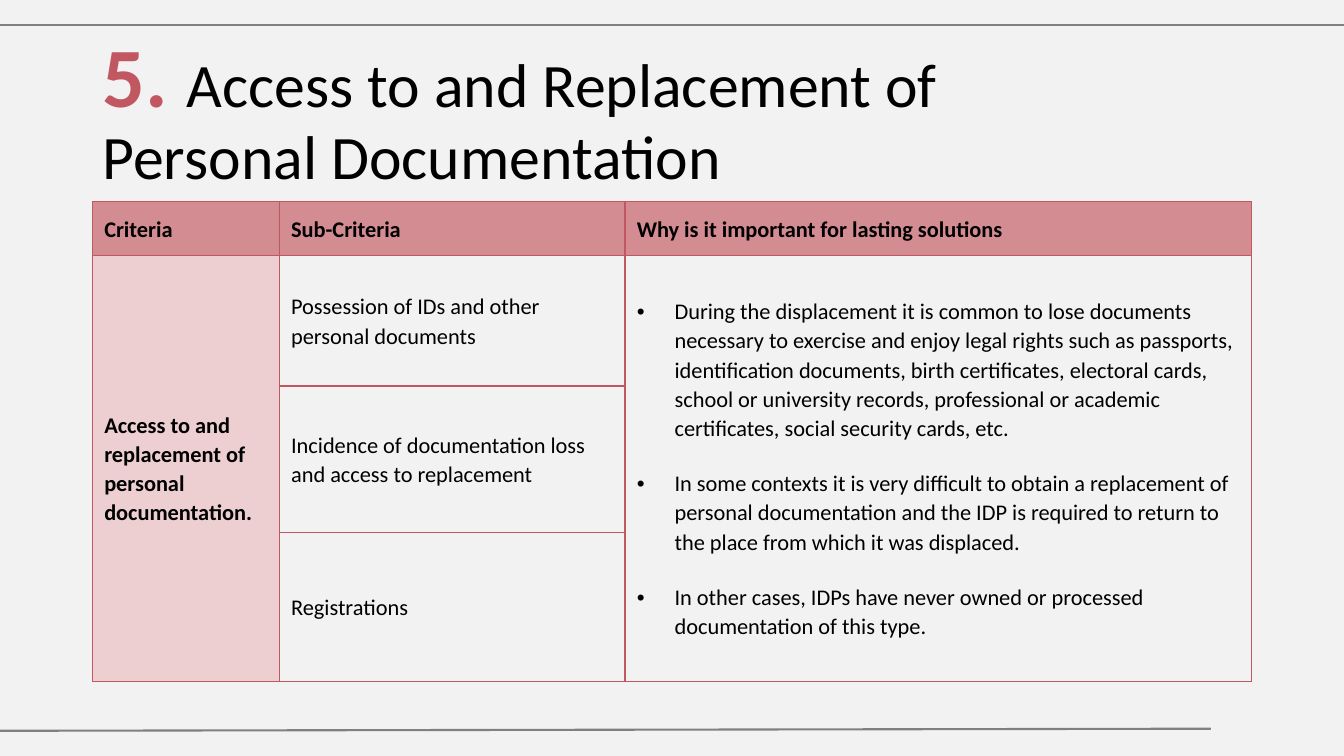
from lxml.etree import SubElement
from pptx import Presentation
from pptx.dml.color import RGBColor
from pptx.enum.shapes import MSO_CONNECTOR as Connector
from pptx.enum.text import MSO_ANCHOR as Anchor, MSO_AUTO_SIZE as AutoSize, PP_ALIGN as Align
from pptx.oxml.ns import qn
from pptx.util import Pt

FONT = "Calibri"
COLORS = {"page": "F2F2F2", "rule": "808080", "accent": "C05761",
          "header": "D48C93", "criteria": "EDCFD2", "text": "000000"}

TITLE = [("5. ", 60.3, "accent", True),
         ("Access to and Replacement of Personal Documentation", 44.1, "text", False)]
HEADERS = ["Criteria", "Sub-Criteria", "Why is it important for lasting solutions"]
CRITERIA = "Access to and replacement of personal documentation."
SUB_CRITERIA = ["Possession of IDs and other personal documents",
                "Incidence of documentation loss and access to replacement",
                "Registrations"]
REASONS = [
    "During the displacement it is common to lose documents necessary to exercise "
    "and enjoy legal rights such as passports, identification documents, birth "
    "certificates, electoral cards, school or university records, professional or "
    "academic certificates, social security cards, etc.",
    "In some contexts it is very difficult to obtain a replacement of personal "
    "documentation and the IDP is required to return to the place from which it "
    "was displaced.",
    "In other cases, IDPs have never owned or processed documentation of this type.",
]

WIDTH, HEIGHT = 960, 540
RULES = [(0, 18, WIDTH, 18), (0, 522, 865, 520.5)]
TITLE_BOX = (66, 29, 756, 104.5)
TABLE_LEFT, TABLE_TOP = 66, 144
COL_WIDTHS = [133.5, 246.9, 447.6]
ROW_HEIGHTS = [38.6, 93.2, 104.4, 106.4]


def color(name):
    return RGBColor.from_string(COLORS[name])


def add_run(p, text, size, color_name, bold):
    r = p.add_run()
    r.text = text
    r.font.name, r.font.size, r.font.bold = FONT, Pt(size), bold
    r.font.color.rgb = color(color_name)


def add_rule(s, x1, y1, x2, y2):
    line = s.shapes.add_connector(Connector.STRAIGHT, Pt(x1), Pt(y1), Pt(x2), Pt(y2))
    line.line.color.rgb = color("rule")
    line.line.width = Pt(1.5)
    SubElement(line._element.spPr, qn("a:effectLst"))


def add_bullet(p):
    pPr = p._p.get_or_add_pPr()
    pPr.set("marL", str(Pt(27)))
    pPr.set("indent", str(Pt(-27)))
    SubElement(pPr, qn("a:buFont"), typeface="Arial")
    SubElement(pPr, qn("a:buChar"), char="•")


def format_cell(cell, fill=None):
    tcPr = cell._tc.get_or_add_tcPr()
    for side in ("lnL", "lnR", "lnT", "lnB"):
        ln = SubElement(tcPr, qn(f"a:{side}"), w=str(Pt(1)))
        SubElement(SubElement(ln, qn("a:solidFill")), qn("a:srgbClr"), val=COLORS["accent"])
    if fill:
        cell.fill.solid()
        cell.fill.fore_color.rgb = color(fill)
    else:
        cell.fill.background()
    cell.vertical_anchor = Anchor.MIDDLE
    cell.margin_left = cell.margin_right = Pt(8.5)
    cell.margin_top = cell.margin_bottom = Pt(5.5)


def write_cell(cell, paragraphs, bold=False, bullets=False):
    tf = cell.text_frame
    for i, text in enumerate(paragraphs):
        p = tf.add_paragraph() if i else tf.paragraphs[0]
        if bullets:
            add_bullet(p)
        p.line_spacing = 1.07
        p.space_after = Pt(0 if bullets else 8)
        if i:
            p.space_before = Pt(18.3)
        add_run(p, text, 16, "text", bold)


def add_title(s):
    title = s.shapes.title
    title.left, title.top, title.width, title.height = map(Pt, TITLE_BOX)
    tf = title.text_frame
    tf.word_wrap, tf.auto_size = True, AutoSize.NONE
    tf.vertical_anchor = Anchor.MIDDLE
    p = tf.paragraphs[0]
    p.alignment, p.line_spacing = Align.LEFT, 0.9
    for run in TITLE:
        add_run(p, *run)


def add_criteria_table(s):
    table = s.shapes.add_table(len(ROW_HEIGHTS), len(COL_WIDTHS), Pt(TABLE_LEFT), Pt(TABLE_TOP),
                               Pt(sum(COL_WIDTHS)), Pt(sum(ROW_HEIGHTS))).table
    table.first_row = table.horz_banding = False
    for col, width in zip(table.columns, COL_WIDTHS):
        col.width = Pt(width)
    for row, height in zip(table.rows, ROW_HEIGHTS):
        row.height = Pt(height)
    for r in range(len(ROW_HEIGHTS)):
        for c in range(len(COL_WIDTHS)):
            fill = "header" if r == 0 else "criteria" if c == 0 else None
            format_cell(table.cell(r, c), fill)
    for c in (0, 2):
        table.cell(1, c).merge(table.cell(3, c))

    for c, text in enumerate(HEADERS):
        write_cell(table.cell(0, c), [text], bold=True)
    write_cell(table.cell(1, 0), [CRITERIA], bold=True)
    for r, text in enumerate(SUB_CRITERIA, 1):
        write_cell(table.cell(r, 1), [text])
    write_cell(table.cell(1, 2), REASONS, bullets=True)


def main():
    prs = Presentation()
    prs.slide_width, prs.slide_height = Pt(WIDTH), Pt(HEIGHT)
    s = prs.slides.add_slide(prs.slide_layouts[5])
    s.background.fill.solid()
    s.background.fill.fore_color.rgb = color("page")
    for rule in RULES:
        add_rule(s, *rule)
    add_title(s)
    add_criteria_table(s)
    prs.save("out.pptx")


if __name__ == "__main__":
    main()
